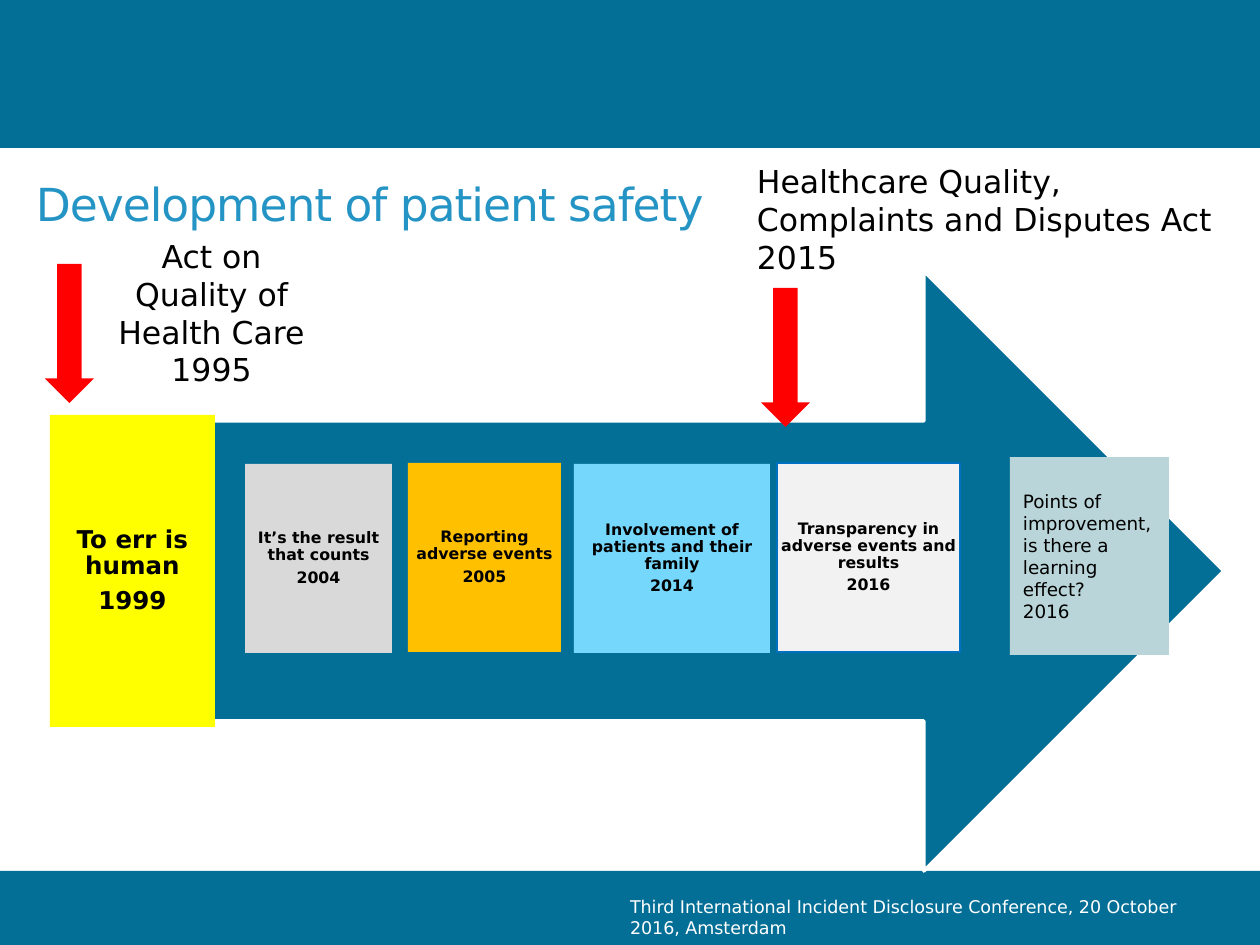
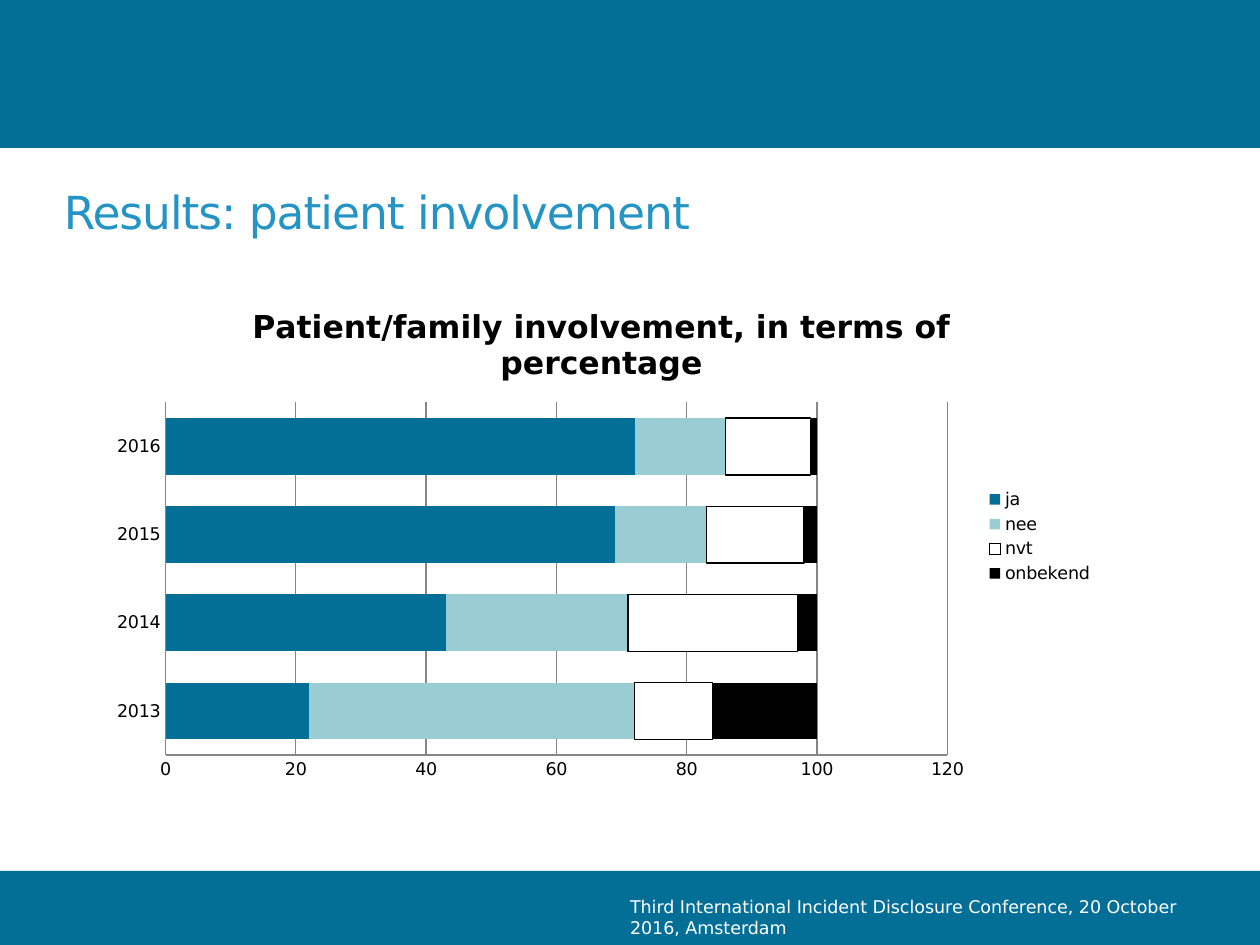
"""Build two slides on patient safety and patient involvement."""
from pptx import Presentation
from pptx.chart.data import CategoryChartData
from pptx.dml.color import RGBColor
from pptx.enum.chart import XL_CHART_TYPE, XL_LEGEND_POSITION, XL_TICK_MARK
from pptx.enum.shapes import MSO_SHAPE
from pptx.enum.text import MSO_ANCHOR, PP_ALIGN
from pptx.util import Emu, Pt

RECT, RIGHT_ARROW, DOWN_ARROW = MSO_SHAPE.RECTANGLE, MSO_SHAPE.RIGHT_ARROW, MSO_SHAPE.DOWN_ARROW
LEFT, CENTER = PP_ALIGN.LEFT, PP_ALIGN.CENTER
TOP, MIDDLE = MSO_ANCHOR.TOP, MSO_ANCHOR.MIDDLE
BAR_STACKED = XL_CHART_TYPE.BAR_STACKED
LEGEND_RIGHT = XL_LEGEND_POSITION.RIGHT
NO_TICK = XL_TICK_MARK.NONE

EMU_PER_PX = 914400 / 126
SLIDE_W, SLIDE_H = 1260, 945
FONT = "DejaVu Sans"
BLUE, TITLE_BLUE, WHITE, BLACK = "046F96", "2494C5", "FFFFFF", "000000"
RED, GRID_GREY = "FF0000", "868686"
FOOTER = "Third International Incident Disclosure Conference, 20 October 2016, Amsterdam"


def px(n):
    """Turn pixels into EMU."""
    return Emu(round(n * EMU_PER_PX))


def rgb(value):
    """Turn a hex string into a colour."""
    return RGBColor.from_string(value)


def style_font(font, size, color=BLACK, bold=False):
    """Set typeface, size, colour and weight."""
    font.name, font.size, font.bold = FONT, Pt(size), bold
    font.color.rgb = rgb(color)


def style_line(line, color, width):
    """Set line colour and width in points."""
    line.color.rgb = rgb(color)
    line.width = Pt(width)


def add_box(slide, kind, box, fill, line=None):
    """Add a filled shape, with an optional (colour, width) line."""
    sp = slide.shapes.add_shape(kind, *map(px, box))
    sp.shadow.inherit = False
    sp.fill.solid()
    sp.fill.fore_color.rgb = rgb(fill)
    if line:
        style_line(sp.line, *line)
    else:
        sp.line.fill.background()
    return sp


def write(sp, lines, size, color=BLACK, bold=False, align=LEFT, anchor=TOP,
          margins=(13, 6), line_spacing=None, after=0, tracking=None):
    """Write one paragraph per line into a shape."""
    tf = sp.text_frame
    tf.word_wrap, tf.vertical_anchor = True, anchor
    tf.margin_left = tf.margin_right = px(margins[0])
    tf.margin_top = tf.margin_bottom = px(margins[1])
    for i, line in enumerate(lines):
        p = tf.add_paragraph() if i else tf.paragraphs[0]
        p.alignment = align
        p.space_after = Pt(after)
        if line_spacing:
            p.line_spacing = line_spacing
        r = p.add_run()
        r.text = line
        style_font(r.font, size, color, bold)
        if tracking:
            r.font._element.set("spc", str(tracking))


def add_text(slide, box, lines, size, **options):
    """Add a text box."""
    write(slide.shapes.add_textbox(*map(px, box)), lines, size, **options)


def add_frame(prs, title, left, top):
    """Add a slide with bands, title and footer."""
    slide = prs.slides.add_slide(prs.slide_layouts[6])
    for y, h in ((871, 74), (0, 148)):
        add_box(slide, RECT, (0, y, SLIDE_W, h), BLUE)
    add_text(slide, (left, top, 1081, 80), [title], 26, color=TITLE_BLUE,
             anchor=MIDDLE, tracking=-60)
    add_text(slide, (617, 890, 573, 44), [FOOTER], 10, color=WHITE)
    return slide


def add_milestone(slide, box, fill, lines, size=9, margin=13, line=None):
    """Add a coloured box with a bold event and its year."""
    sp = add_box(slide, RECT, box, fill, line)
    write(sp, lines, size, bold=True, align=CENTER, anchor=MIDDLE,
          margins=(0, margin), line_spacing=0.9, after=round(size * 0.35, 1))


def add_timeline(slide, box):
    """Add the big arrow with its milestones."""
    x, y, w, h = box
    add_box(slide, RIGHT_ARROW, box, BLUE, (WHITE, 2))
    add_milestone(slide, (x, y + 144, 165, 312), "FFFF00", ["To err is human", "1999"], 14, 20)
    milestones = [
        (195, 193, 147, "D9D9D9", "It’s the result that counts", "2004", None),
        (358, 192, 153, "FFC000", "Reporting adverse events", "2005", None),
        (524, 193, 196, "74D7FB", "Involvement of patients and their family", "2014", None),
        (727, 192, 183, "F2F2F2", "Transparency in adverse events and results", "2016",
         ("0070C0", 0.75)),
    ]
    for dx, dy, width, fill, event, year, line in milestones:
        add_milestone(slide, (x + dx, y + dy, width, 189), fill, [event, year], line=line)
    sp = add_box(slide, RECT, (x + 960, y + 186, 159, 198), "B9D5D9")
    write(sp, ["Points of improvement, is there a learning effect?", "2016"], 10.5,
          anchor=MIDDLE)


def add_law(slide, arrow_at, text_box, lines, align=LEFT):
    """Add a law's name and its red arrow."""
    add_box(slide, DOWN_ARROW, (*arrow_at, 49, 139), RED)
    add_text(slide, text_box, lines, 18, align=align)


def add_involvement_chart(slide, box):
    """Add the stacked bar chart of involvement per year."""
    series = [
        ("ja", (22, 43, 69, 72), BLUE),
        ("nee", (50, 28, 14, 14), "9ACCD4"),
        ("nvt", (12, 26, 15, 13), WHITE),
        ("onbekend", (16, 3, 2, 1), BLACK),
    ]
    data = CategoryChartData()
    data.categories = ["2013", "2014", "2015", "2016"]
    for name, values, _ in series:
        data.add_series(name, values)
    chart = slide.shapes.add_chart(BAR_STACKED, *map(px, box), data).chart
    style_font(chart.font, 10)

    chart.has_title = True
    r = chart.chart_title.text_frame.paragraphs[0].add_run()
    r.text = "Patient/family involvement, in terms of percentage"
    style_font(r.font, 18, bold=True)
    chart.chart_title.include_in_layout = False

    chart.has_legend = True
    chart.legend.position = LEGEND_RIGHT
    chart.legend.include_in_layout = False

    plot = chart.plots[0]
    plot.gap_width, plot.overlap, plot.vary_by_categories = 55, 100, False
    for s, (_, _, color) in zip(plot.series, series):
        s.format.fill.solid()
        s.format.fill.fore_color.rgb = rgb(color)
        if color == WHITE:
            style_line(s.format.line, BLACK, 0.75)

    values = chart.value_axis
    values.minimum_scale, values.maximum_scale, values.major_unit = 0, 120, 20
    values.has_major_gridlines = True
    style_line(values.major_gridlines.format.line, GRID_GREY, 0.75)
    for axis in (chart.category_axis, values):
        axis.major_tick_mark = axis.minor_tick_mark = NO_TICK
        style_line(axis.format.line, GRID_GREY, 0.75)


def build_development(prs):
    """Build the timeline slide."""
    slide = add_frame(prs, "Development of patient safety", 23, 163)
    add_timeline(slide, (50, 271, 1174, 600))
    add_law(slide, (45, 264), (88, 231, 247, 165),
            ["Act on Quality of Health Care 1995"], CENTER)
    add_law(slide, (761, 288), (744, 156, 490, 127),
            ["Healthcare Quality,", "Complaints and Disputes Act", "2015"])


def build_results(prs):
    """Build the chart slide."""
    slide = add_frame(prs, "Results: patient involvement", 51, 171)
    add_involvement_chart(slide, (97, 283, 1009, 507))


def main():
    """Build and save the presentation."""
    prs = Presentation()
    prs.slide_width, prs.slide_height = px(SLIDE_W), px(SLIDE_H)
    build_development(prs)
    build_results(prs)
    prs.save("out.pptx")


if __name__ == "__main__":
    main()
